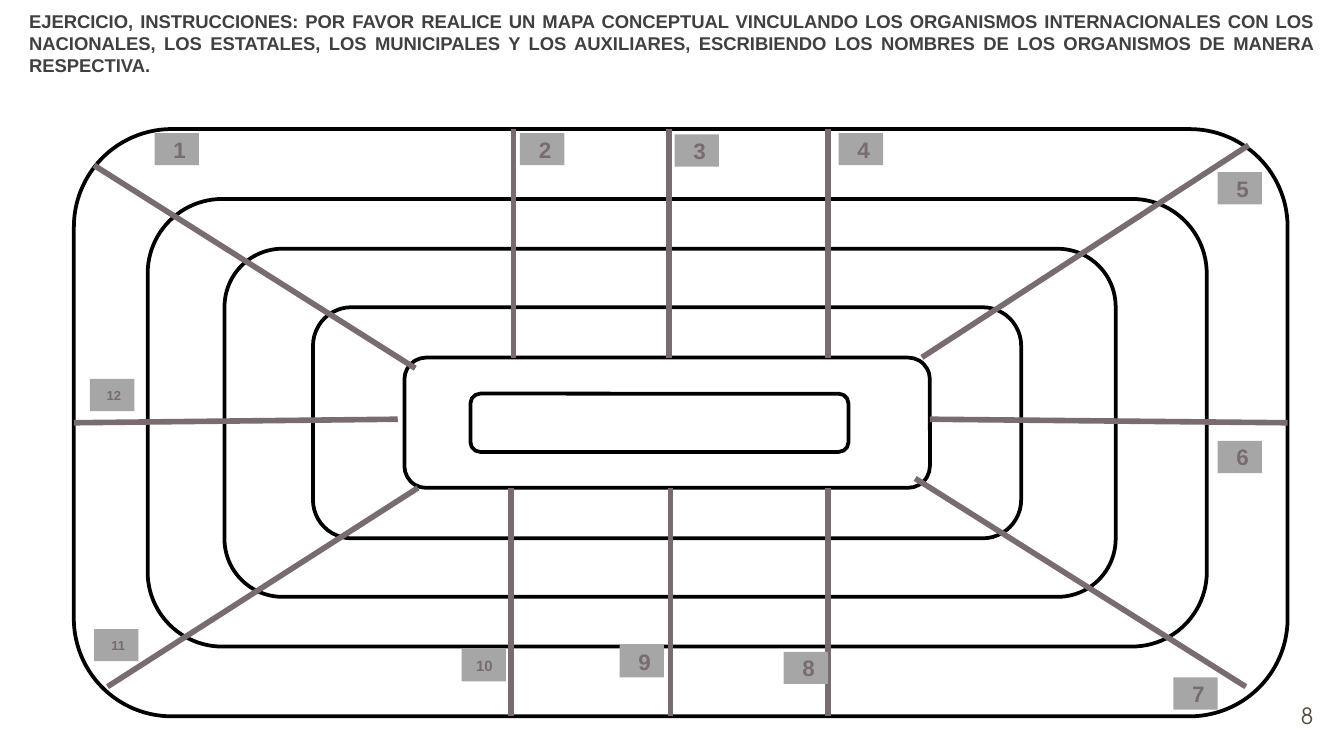
from pptx import Presentation
from pptx.dml.color import RGBColor
from pptx.enum.shapes import MSO_CONNECTOR, MSO_SHAPE
from pptx.enum.text import MSO_ANCHOR, PP_ALIGN
from pptx.oxml.ns import qn
from pptx.util import Pt
from lxml import etree

RECT, ROUND = MSO_SHAPE.RECTANGLE, MSO_SHAPE.ROUNDED_RECTANGLE
LINE = MSO_CONNECTOR.STRAIGHT
MIDDLE, BOTTOM = MSO_ANCHOR.MIDDLE, MSO_ANCHOR.BOTTOM
RIGHT, JUST = PP_ALIGN.RIGHT, PP_ALIGN.JUSTIFY

THEME = {
    "paper": "FFFFFF", "ring": "000000", "spoke": "786C71", "tag": "A6A6A6",
    "title": "404040", "page": "564B3C",
    "font": "Arial", "page font": "TeX Gyre Adventor",
    "title size": 9.9, "size": 12, "ring width": 2, "spoke width": 3, "inset": 7.2,
}

TITLE = (
    "EJERCICIO, INSTRUCCIONES: POR FAVOR REALICE UN MAPA CONCEPTUAL VINCULANDO "
    "LOS ORGANISMOS INTERNACIONALES CON LOS NACIONALES, LOS ESTATALES, LOS "
    "MUNICIPALES Y LOS AUXILIARES, ESCRIBIENDO LOS NOMBRES DE LOS ORGANISMOS "
    "DE MANERA RESPECTIVA."
)
PAGE = "8"

# Rings share one middle height: centre x, width, height, outermost first
MID = 226.5
RINGS = [
    (364.7, 650.2, 314.6), (362.8, 567.4, 239.8), (359, 477.4, 186.5),
    (357.4, 379.4, 123.8), (357.4, 281.5, 69.8), (353.3, 202.5, 31.2),
]
TOPS = [275, 358.5, 443.5]
FEET = [273.6, 359.3, 443.5]
DIAGS = [
    (493.9, 191.5, 668.9, 77.8), (490.3, 256.3, 667.4, 367.9),
    (223.9, 261.4, 57.6, 367.9), (222.5, 197.3, 50.4, 88.6),
]
# Inner end of each level spoke, and the side of the outer ring it meets
LEVELS = [(498.2, 224.6, 3), (213.1, 224.6, 1)]

# Number: left, top
TAG_W, TAG_H = 23.8, 17.3
TAGS = {
    1: (82.8, 71.3), 2: (278.6, 71.3), 3: (361.4, 72), 4: (449.3, 71.3),
    5: (652.3, 92.2), 6: (652.3, 236.2), 7: (628.6, 362.9), 8: (419.8, 349.2),
    9: (331.9, 345.6), 10: (247.3, 347.8), 11: (50.4, 337), 12: (48.2, 203),
}
SMALL = {10: 8, 11: 7, 12: 7}


def ink(name):
    return RGBColor.from_string(THEME[name])


def pts(*nums):
    return [Pt(n) for n in nums]


def write(shape, text, color, size, font="font", bold=True, align=RIGHT, anchor=MIDDLE):
    frame = shape.text_frame
    frame.word_wrap = True
    frame.vertical_anchor = anchor
    frame.margin_left = frame.margin_right = Pt(THEME["inset"])
    frame.margin_top = frame.margin_bottom = Pt(THEME["inset"])
    para = frame.paragraphs[0]
    para.text = text
    para.alignment = align
    para.font.name = THEME[font]
    para.font.size = Pt(size)
    para.font.bold = bold
    para.font.color.rgb = ink(color)


def block(kind, box, fill, edge=None):
    shape = slide.shapes.add_shape(kind, *pts(*box))
    shape.shadow.inherit = False
    shape.fill.solid()
    shape.fill.fore_color.rgb = ink(fill)
    if edge:
        shape.line.color.rgb = ink(edge)
        shape.line.width = Pt(THEME["ring width"])
    else:
        shape.line.fill.background()
    return shape


def spoke(*ends):
    line = slide.shapes.add_connector(LINE, *pts(*ends))
    line.line.color.rgb = ink("spoke")
    line.line.width = Pt(THEME["spoke width"])
    etree.SubElement(line._element.spPr, qn("a:effectLst"))
    return line


deck = Presentation()
deck.slide_width, deck.slide_height = pts(720, 405)
slide = deck.slides.add_slide(deck.slide_layouts[6])

head = slide.shapes.add_textbox(*pts(8.6, 7.9, 702.7, 40.3))
write(head, TITLE, "title", THEME["title size"], align=JUST, anchor=BOTTOM)
foot = slide.shapes.add_textbox(*pts(689, 368, 21.6, 31))
write(foot, PAGE, "page", THEME["size"], font="page font", bold=False)

rings = [block(ROUND, (cx - w / 2, MID - h / 2, w, h), "paper", "ring")
         for cx, w, h in RINGS]

outer, inner = RINGS[0][2] / 2, RINGS[4][2] / 2
for x in TOPS:
    spoke(x, MID - outer, x, MID - inner)
for x in FEET:
    spoke(x, MID + inner, x, MID + outer)
for ends in DIAGS:
    spoke(*ends)
for x, y, side in LEVELS:
    spoke(x, y, x, MID).end_connect(rings[0], side)

for num, (x, y) in TAGS.items():
    tag = block(RECT, (x, y, TAG_W, TAG_H), "tag")
    write(tag, str(num), "spoke", SMALL.get(num, THEME["size"]))

deck.save("out.pptx")
